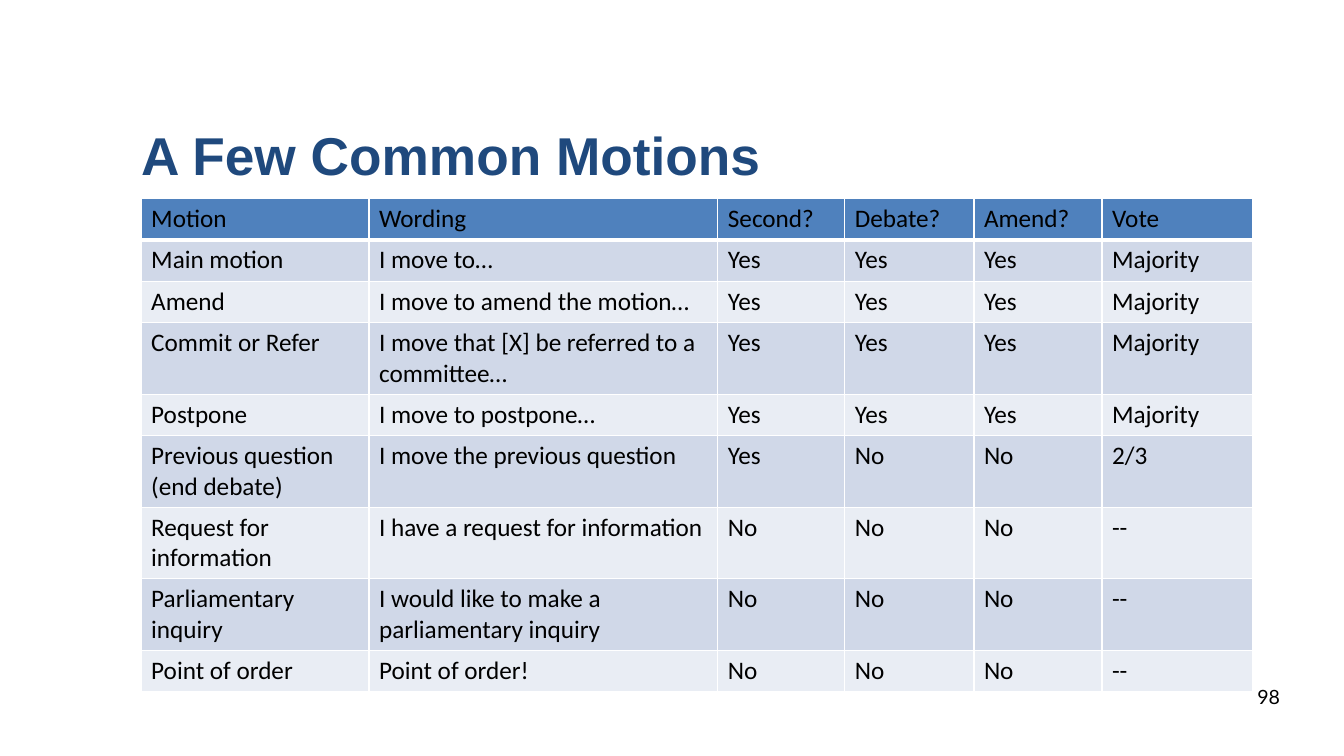
"""Build a slide with a table of common parliamentary motions."""
from lxml.etree import SubElement
from pptx import Presentation
from pptx.dml.color import RGBColor
from pptx.enum.text import MSO_ANCHOR as Anchor, MSO_AUTO_SIZE as AutoSize, PP_ALIGN as Align
from pptx.oxml.ns import qn
from pptx.util import Inches, Pt

TITLE = "A Few Common Motions"
PAGE_NUMBER = "98"
MOTIONS = [
    ("Motion", "Wording", "Second?", "Debate?", "Amend?", "Vote"),
    ("Main motion", "I move to…", "Yes", "Yes", "Yes", "Majority"),
    ("Amend", "I move to amend the motion…", "Yes", "Yes", "Yes", "Majority"),
    ("Commit or Refer", "I move that [X] be referred to a committee…", "Yes", "Yes", "Yes", "Majority"),
    ("Postpone", "I move to postpone…", "Yes", "Yes", "Yes", "Majority"),
    ("Previous question (end debate)", "I move the previous question", "Yes", "No", "No", "2/3"),
    ("Request for information", "I have a request for information", "No", "No", "No", "--"),
    ("Parliamentary inquiry", "I would like to make a parliamentary inquiry", "No", "No", "No", "--"),
    ("Point of order", "Point of order!", "No", "No", "No", "--"),
]
COLUMN_WIDTHS = (2.26, 3.46, 1.26, 1.28, 1.27, 1.49)
ROW_HEIGHT = 0.41
HEADER_FILL = "4F81BD"
BAND_FILLS = ("E9EDF4", "D0D8E8")
BORDER = "FFFFFF"


def color(value):
    return RGBColor.from_string(value)


def write(frame, text, name, size, value, bold=False):
    frame.text = text
    paragraph = frame.paragraphs[0]
    paragraph.alignment = Align.LEFT
    font = paragraph.font
    font.name, font.size, font.bold = name, Pt(size), bold
    font.color.rgb = color(value)


def clear_margins(frame):
    frame.margin_left = frame.margin_top = frame.margin_right = frame.margin_bottom = 0


def add_borders(cell, bottom_width):
    properties = cell._tc.get_or_add_tcPr()
    for side, width in (("L", 1), ("R", 1), ("T", 1), ("B", bottom_width)):
        line = SubElement(properties, qn(f"a:ln{side}"), w=str(Pt(width)))
        SubElement(SubElement(line, qn("a:solidFill")), qn("a:srgbClr"), val=BORDER)


def add_title(slide):
    title = slide.shapes.title
    title.left, title.top = Inches(1.4), Inches(0.4)
    title.width, title.height = Inches(10.99), Inches(1.45)
    frame = title.text_frame
    clear_margins(frame)
    frame.vertical_anchor = Anchor.BOTTOM
    write(frame, TITLE, "Arial", 38, "1F497D", True)


def add_motions(slide):
    table = slide.shapes.add_table(
        len(MOTIONS), len(COLUMN_WIDTHS), Inches(1.4), Inches(1.97),
        Inches(sum(COLUMN_WIDTHS)), Inches(ROW_HEIGHT * len(MOTIONS))).table
    for column, width in zip(table.columns, COLUMN_WIDTHS):
        column.width = Inches(width)
    for row_index, motion in enumerate(MOTIONS):
        table.rows[row_index].height = Inches(ROW_HEIGHT)
        fill = BAND_FILLS[row_index % 2] if row_index else HEADER_FILL
        for column_index, text in enumerate(motion):
            cell = table.cell(row_index, column_index)
            write(cell.text_frame, text, "Calibri", 18, "000000")
            add_borders(cell, 1 if row_index else 3)
            cell.fill.solid()
            cell.fill.fore_color.rgb = color(fill)


def add_page_number(slide):
    shape = slide.shapes.add_textbox(Inches(12.47), Inches(6.79), Inches(0.3), Inches(0.25))
    frame = shape.text_frame
    clear_margins(frame)
    frame.word_wrap = True
    frame.auto_size = AutoSize.SHAPE_TO_FIT_TEXT
    write(frame, PAGE_NUMBER, "Lato", 14, "000000")


def main():
    presentation = Presentation()
    presentation.slide_width, presentation.slide_height = Inches(13.33), Inches(7.5)
    slide = presentation.slides.add_slide(presentation.slide_layouts[5])
    add_title(slide)
    add_motions(slide)
    add_page_number(slide)
    presentation.save("out.pptx")


if __name__ == "__main__":
    main()
